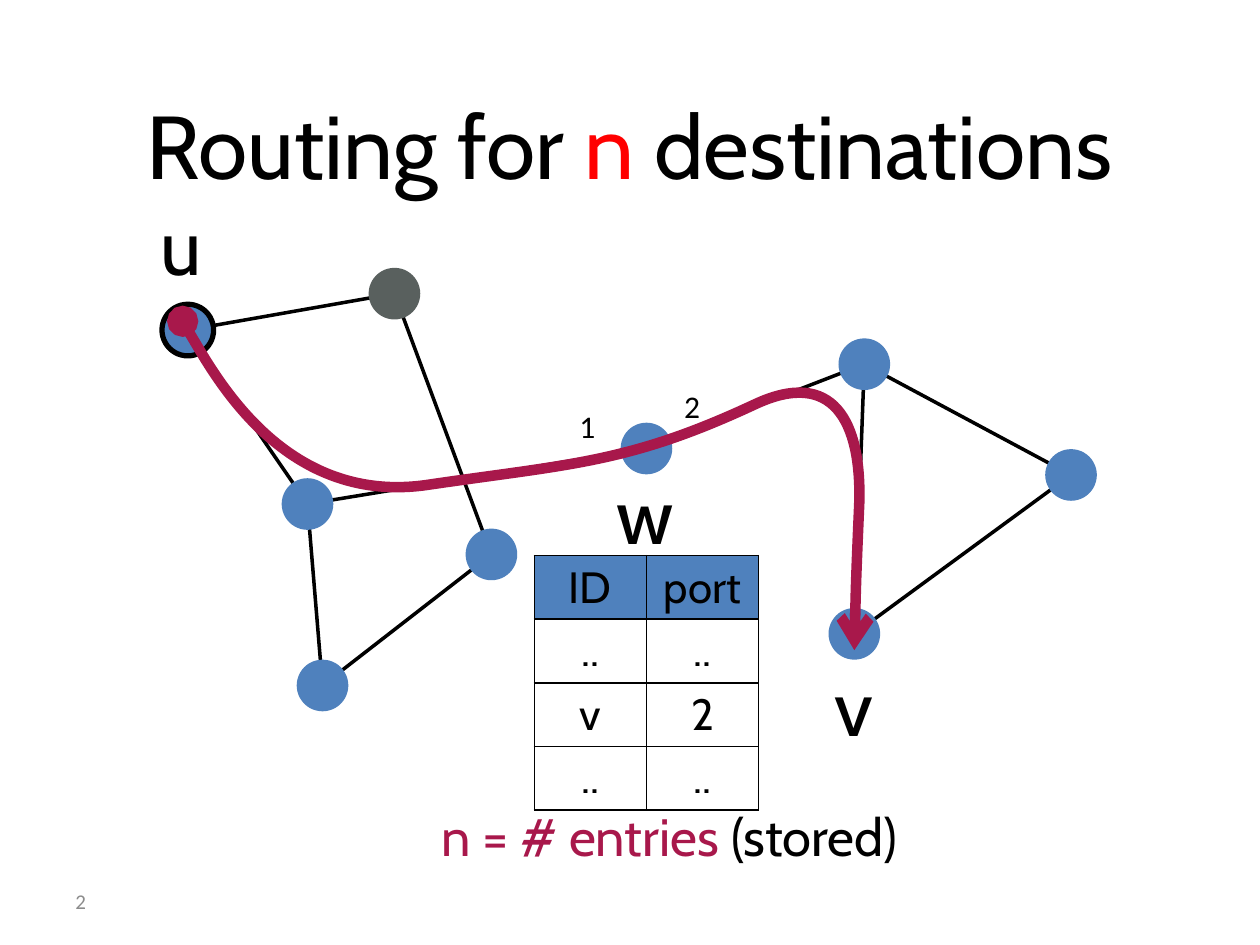
import pptx
import pptx.util
import pptx.dml.color
import pptx.enum.shapes
import pptx.enum.text
import pptx.oxml.ns
import lxml.etree

Pt = pptx.util.Pt
Shape = pptx.enum.shapes.MSO_SHAPE
Line = pptx.enum.shapes.MSO_CONNECTOR
Align = pptx.enum.text.PP_ALIGN
Anchor = pptx.enum.text.MSO_ANCHOR
Auto = pptx.enum.text.MSO_AUTO_SIZE
qn = pptx.oxml.ns.qn

BLACK, BLUE, GRAY, WINE, RED = "000000", "4F81BD", "59605E", "A8184B", "FF0000"
SIZE = 29.5

NODES = {
    "top": (225.4, 167.8), "u": (107.3, 188.6), "hub": (175.7, 288),
    "low": (184.3, 391.7), "mid": (280.8, 316.8), "w": (369.4, 256.3),
    "peak": (493.9, 208.1), "east": (612, 271.4), "v": (488.2, 362.2),
}
EDGES = [
    ("top", "mid"), ("top", "u"), ("mid", "low"), ("peak", "w"), ("w", "hub"),
    ("east", "v"), ("peak", "v"), ("peak", "east"), ("hub", "low"), ("u", "hub"),
]
ROUTE = [
    (104.4, 183.6),
    (104.4, 183.6), (160.6, 288.7), (243.4, 277.2),
    (326.2, 265), (358.6, 265), (431.3, 231.1),
    (475.9, 210.2), (492.5, 240.5), (491, 288),
    (488.9, 336.2), (488.2, 371.5), (488.2, 371.5),
]
ROWS = [("ID", "port"), ("..", ".."), ("v", "2"), ("..", "..")]


def color(code):
    return pptx.dml.color.RGBColor.from_string(code)


def apply(item, **values):
    for name, value in values.items():
        setattr(item, name, value)


class Board:
    """Hold the text style and the slide being drawn."""

    def __init__(self, slide, font):
        self.slide, self.font = slide, font
        self.shapes = slide.shapes

    def words(self, frame, parts, size, font=None, align=Align.CENTER, inset=0, **extra):
        margins = {f"margin_{side}": Pt(inset) for side in ("left", "right", "top", "bottom")}
        apply(frame, **{"vertical_anchor": Anchor.MIDDLE, **margins, **extra})
        para = frame.paragraphs[0]
        para.alignment = align
        for text, code in parts:
            run = para.add_run()
            run.text = text
            apply(run.font, name=font or self.font, size=Pt(size), bold=False)
            run.font.color.rgb = color(code)
        return para

    def title(self, box, parts, size):
        item = self.shapes.title
        apply(item, **dict(zip(("left", "top", "width", "height"), map(Pt, box))))
        self.words(item.text_frame, parts, size, word_wrap=True, auto_size=Auto.NONE)

    def text(self, box, parts, size, indent=0, **style):
        frame = self.shapes.add_textbox(*map(Pt, box)).text_frame
        para = self.words(frame, parts, size, **{"word_wrap": False, **style})
        if indent:
            para._p.get_or_add_pPr().set("marL", str(Pt(indent)))

    def edge(self, start, end):
        link = self.shapes.add_connector(Line.STRAIGHT, *map(Pt, start + end))
        link.line.width = Pt(2)
        link.line.color.rgb = color(BLACK)
        lxml.etree.SubElement(link._element.spPr, qn("a:effectLst"))

    def node(self, center, fill, ring=False):
        x, y = center
        dot = self.shapes.add_shape(
            Shape.OVAL, Pt(x - SIZE / 2), Pt(y - SIZE / 2), Pt(SIZE), Pt(SIZE))
        dot.shadow.inherit = False
        dot.fill.solid()
        dot.fill.fore_color.rgb = color(fill)
        if ring:
            dot.line.width = Pt(3)
            dot.line.color.rgb = color(BLACK)
        else:
            dot.line.fill.background()

    def curve(self, points, code, width):
        first, *rest = [(Pt(x), Pt(y)) for x, y in points]
        pen = self.shapes.build_freeform(*first)
        pen.add_line_segments(rest, close=False)
        item = pen.convert_to_shape()
        item.shadow.inherit = False
        item.fill.background()
        item.line.width = Pt(width)
        item.line.color.rgb = color(code)
        track = item._element.find(".//" + qn("a:path"))
        steps = track.findall(qn("a:lnTo"))
        for start in range(0, len(steps), 3):
            bend = lxml.etree.SubElement(track, qn("a:cubicBezTo"))
            for step in steps[start:start + 3]:
                bend.append(step[0])
                track.remove(step)
        stroke = item._element.spPr.find(qn("a:ln"))
        for tag, kind in (("a:headEnd", "oval"), ("a:tailEnd", "arrow")):
            lxml.etree.SubElement(stroke, qn(tag), type=kind)

    def border(self, cell):
        props = cell._tc.get_or_add_tcPr()
        for place, tag in enumerate(("a:lnL", "a:lnR", "a:lnT", "a:lnB")):
            side = lxml.etree.Element(qn(tag), w=str(Pt(1)))
            fill = lxml.etree.SubElement(side, qn("a:solidFill"))
            lxml.etree.SubElement(fill, qn("a:srgbClr"), val=BLACK)
            props.insert(place, side)

    def table(self, box, rows, size):
        grid = self.shapes.add_table(len(rows), len(rows[0]), *map(Pt, box)).table
        apply(grid, first_row=False, horz_banding=False)
        for r, row in enumerate(rows):
            for c, word in enumerate(row):
                cell = grid.cell(r, c)
                self.words(cell.text_frame, [(word, BLACK)], size)
                apply(cell, vertical_anchor=Anchor.MIDDLE, margin_left=Pt(3),
                      margin_right=Pt(3), margin_top=Pt(3), margin_bottom=Pt(3))
                if r == 0:
                    cell.fill.solid()
                    cell.fill.fore_color.rgb = color(BLUE)
                else:
                    cell.fill.background()
                self.border(cell)


def main():
    deck = pptx.Presentation()
    apply(deck, slide_width=Pt(720), slide_height=Pt(540))
    board = Board(deck.slides.add_slide(deck.slide_layouts[5]), "Cabin")

    board.title((19.4, 14.4, 680.4, 135.4),
                [("Routing for ", BLACK), ("n", RED), (" destinations", BLACK)], 51)
    for start, end in EDGES:
        board.edge(NODES[start], NODES[end])
    for name, center in NODES.items():
        board.node(center, GRAY if name == "top" else BLUE, ring=name == "u")
    board.curve(ROUTE, WINE, 6)

    board.table((305.3, 317.5, 128.2, 144), ROWS, 25)
    for name, box in (("u", (90.7, 112.3, 25.2, 54.7)),
                      ("v", (476.6, 375.8, 23, 54.7)),
                      ("w", (352.1, 265.7, 33.1, 54.7))):
        board.text(box, [(name, BLACK)], 45)
    board.text((215.3, 459.4, 307.4, 36),
               [("n = # entries", WINE), (" (stored)", BLACK)], 30, indent=27)

    plain = {"font": "Calibri", "align": Align.LEFT, "word_wrap": True,
             "margin_left": Pt(7.2), "margin_right": Pt(7.2),
             "margin_top": Pt(3.6), "margin_bottom": Pt(3.6)}
    for port, x, y in (("2", 383.8, 217.4), ("1", 324, 229)):
        board.text((x, y, 30.2, 30.2), [(port, BLACK)], 18,
                   vertical_anchor=Anchor.TOP, **plain)
    board.text((36, 500.4, 168, 28.8), [("2", "8C8C8C")], 12, **plain)
    deck.save("out.pptx")


if __name__ == "__main__":
    main()
